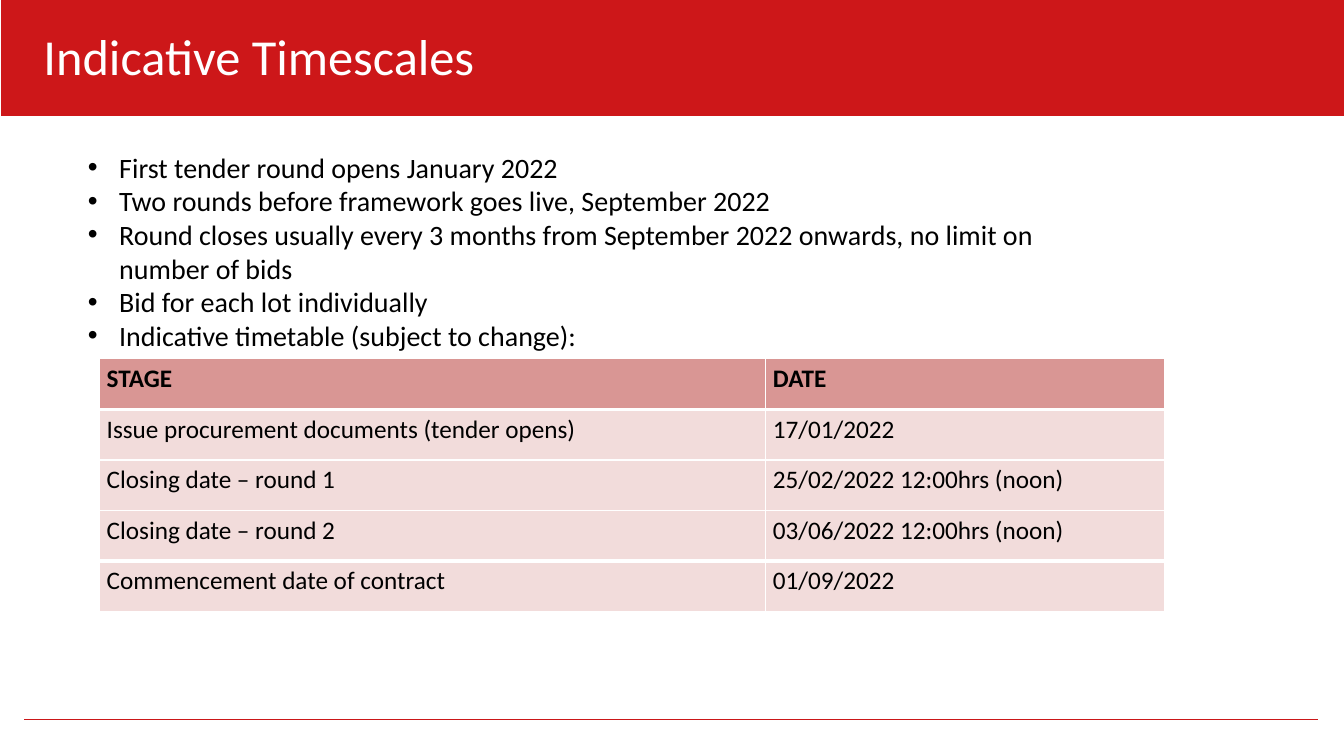
from lxml import etree
from pptx import Presentation
from pptx import util as u
from pptx.dml import color
from pptx.enum import shapes, text
from pptx.oxml import ns

FONT = "Calibri"
RED, WHITE, BLACK = "CD1719", "FFFFFF", "000000"
HEAD, PALE = "D99694", "F2DCDB"

POINTS = [
    "First tender round opens January 2022",
    "Two rounds before framework goes live, September 2022",
    "Round closes usually every 3 months from September 2022 onwards, "
    "no limit on number of bids",
    "Bid for each lot individually",
    "Indicative timetable (subject to change):",
]
STAGES = [
    ("STAGE", "DATE"),
    ("Issue procurement documents (tender opens)", "17/01/2022"),
    ("Closing date – round 1", "25/02/2022 12:00hrs (noon)"),
    ("Closing date – round 2", "03/06/2022 12:00hrs (noon)"),
    ("Commencement date of contract", "01/09/2022"),
]


def paint(target, shade):
    """Give a fill, or the fill of a line, one solid colour."""
    target.solid()
    target.fore_color.rgb = color.RGBColor.from_string(shade)


def place(shape, left, top, width, height):
    shape.left, shape.top = u.Cm(left), u.Cm(top)
    shape.width, shape.height = u.Cm(width), u.Cm(height)


def write(para, words, size, shade=BLACK, bold=False):
    run = para.add_run()
    run.text = words
    font = run.font
    font.name, font.size, font.bold = FONT, u.Pt(size), bold
    font.color.rgb = color.RGBColor.from_string(shade)


def indent(para, depth):
    props = para._p.get_or_add_pPr()
    props.set("marL", str(u.Cm(depth)))
    props.set("indent", str(-u.Cm(depth)))
    return props


def add_band(slide):
    band = slide.shapes.add_shape(
        shapes.MSO_SHAPE.RECTANGLE, u.Cm(0.03), 0, u.Cm(33.84), u.Cm(2.92))
    band.shadow.inherit = False
    paint(band.fill, RED)
    band.line.fill.background()
    # Behind the title placeholder
    slide.shapes._spTree.insert(2, band._element)


def add_rule(slide):
    rule = slide.shapes.add_connector(
        shapes.MSO_CONNECTOR.STRAIGHT,
        u.Cm(0.61), u.Cm(18.11), u.Cm(33.22), u.Cm(18.11))
    paint(rule.line.fill, "CB1719")
    rule.line.width = u.Pt(0.25)
    etree.SubElement(rule._element.spPr, ns.qn("a:effectLst"))


def fill_title(title, words):
    place(title, 0.84, 0.38, 23.22, 2.01)
    frame = title.text_frame
    frame.vertical_anchor = text.MSO_ANCHOR.MIDDLE
    para = frame.paragraphs[0]
    para.alignment = text.PP_ALIGN.LEFT
    write(para, words, 36, WHITE)


def fill_list(body, points):
    place(body, 1.96, 3.66, 24.38, 5.38)
    frame = body.text_frame
    frame.auto_size = text.MSO_AUTO_SIZE.SHAPE_TO_FIT_TEXT
    for i, words in enumerate(points):
        para = frame.add_paragraph() if i else frame.paragraphs[0]
        para.space_before = u.Pt(0)
        props = indent(para, 0.79)
        etree.SubElement(props, ns.qn("a:buFont"), typeface="Arial")
        etree.SubElement(props, ns.qn("a:buChar"), char="•")
        write(para, words, 20)


def edge(cell, widths):
    """Draw white borders; widths maps L, R, T and B to points."""
    props = cell._tc.get_or_add_tcPr()
    for i, (side, width) in enumerate(widths.items()):
        line = etree.Element(ns.qn(f"a:ln{side}"), w=str(u.Pt(width)))
        fill = etree.SubElement(line, ns.qn("a:solidFill"))
        etree.SubElement(fill, ns.qn("a:srgbClr"), val=WHITE)
        props.insert(i, line)


def fill_cell(cell, words, row, last):
    first = row == 0
    paint(cell.fill, HEAD if first else PALE)
    cell.margin_left = cell.margin_right = u.Cm(0.18)
    cell.margin_top = cell.margin_bottom = 0
    para = cell.text_frame.paragraphs[0]
    para.line_spacing = 1.15
    para.space_before = para.space_after = u.Pt(2)
    if first:
        indent(para, 1.57)
    write(para, words, 18, bold=first)
    # Thick lines under the heading and above the last row
    edge(cell, {"L": 1, "R": 1,
                "T": 3 if row in (1, last) else 1,
                "B": 3 if row in (0, last - 1) else 1})


def add_dates(slide, rows):
    grid = slide.shapes.add_table(
        len(rows), 2, u.Cm(2.51), u.Cm(9.04), u.Cm(26.85), u.Cm(6.38)).table
    for col, width in zip(grid.columns, (16.79, 10.06)):
        col.width = u.Cm(width)
    for r, row in enumerate(rows):
        for c, words in enumerate(row):
            fill_cell(grid.cell(r, c), words, r, len(rows) - 1)


def main():
    deck = Presentation()
    deck.slide_width, deck.slide_height = u.Cm(33.87), u.Cm(19.05)
    slide = deck.slides.add_slide(deck.slide_layouts[1])
    title, body = slide.placeholders

    # Heading band and foot rule
    add_band(slide)
    add_rule(slide)

    # Title, list and timetable
    fill_title(title, "Indicative Timescales")
    fill_list(body, POINTS)
    add_dates(slide, STAGES)
    deck.save("out.pptx")


if __name__ == "__main__":
    main()
